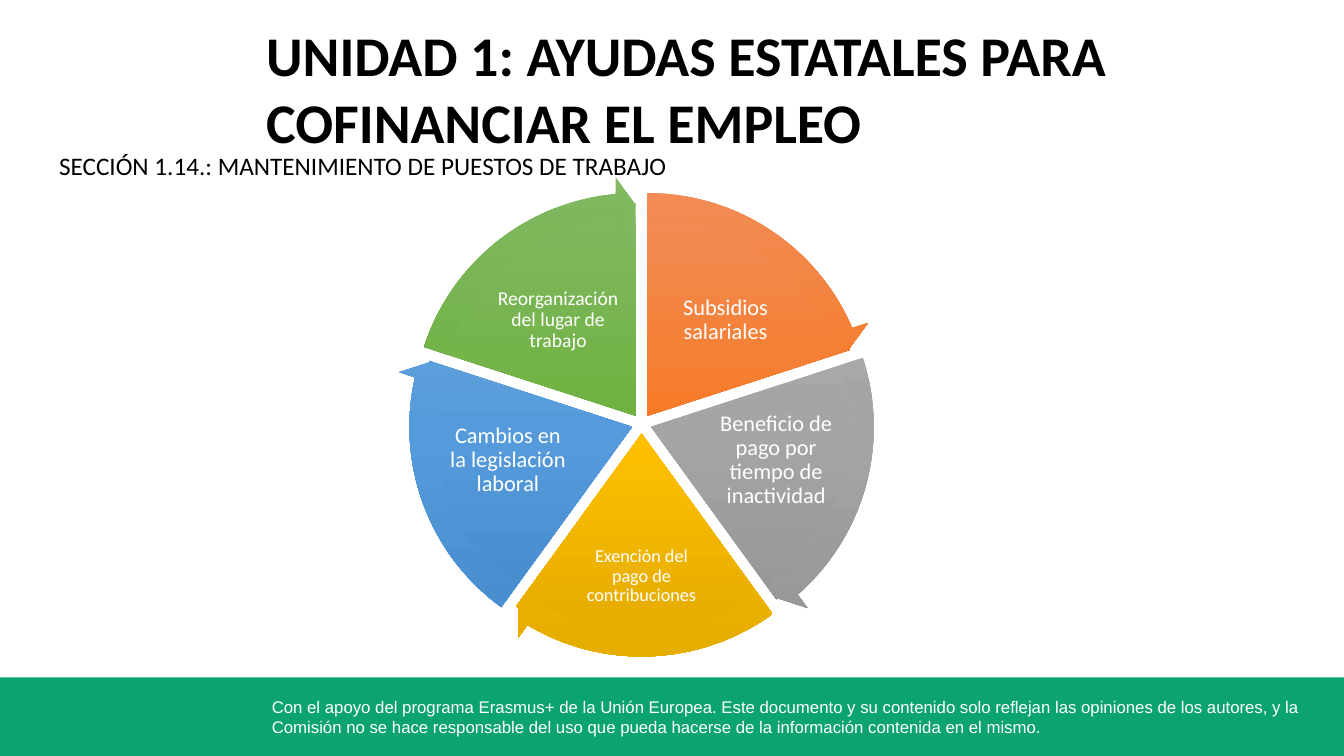
"""Build the slide on state aid for keeping jobs, with its five-part cycle."""
from copy import deepcopy
from math import cos, radians, sin

from pptx import Presentation
from pptx.dml.color import RGBColor as RGB
from pptx.enum.shapes import MSO_SHAPE as Kind
from pptx.enum.text import MSO_ANCHOR as Anchor, PP_ALIGN as Align
from pptx.oxml.ns import qn
from pptx.util import Cm, Pt

BLACK = RGB(0x00, 0x00, 0x00)
WHITE = RGB(0xFF, 0xFF, 0xFF)
TEAL = RGB(0x0C, 0xA3, 0x73)
ORANGE = RGB(0xF1, 0x8C, 0x57), RGB(0xF6, 0x7B, 0x28), RGB(0xE5, 0x6C, 0x19)
GRAY = RGB(0xAF, 0xAF, 0xAF), RGB(0xA5, 0xA5, 0xA5), RGB(0x93, 0x93, 0x93)
GOLD = RGB(0xFF, 0xC6, 0x4B), RGB(0xFF, 0xC0, 0x00), RGB(0xE3, 0xAB, 0x00)
BLUE = RGB(0x71, 0xA6, 0xDB), RGB(0x55, 0x9B, 0xDB), RGB(0x44, 0x8A, 0xCA)
GREEN = RGB(0x81, 0xB8, 0x61), RGB(0x6F, 0xB2, 0x42), RGB(0x62, 0xA3, 0x36)

WIDTH, HEIGHT = 33.87, 19.05
MID_X, MID_Y = 16.17, 10.68
SHIFT = 0.25
PIE, RING = 10.74, 12.07
STEP = 72
UNIT = 0.6

PARTS = [
    ("Subsidios salariales", 16, ORANGE, (16.56, 6.91, 3.45, 2.31)),
    ("Beneficio de pago por tiempo de inactividad", 16, GRAY,
     (17.96, 10.31, 3.2, 2.57)),
    ("Exención del pago de contribuciones", 13, GOLD,
     (14.63, 13.11, 3.07, 2.82)),
    ("Cambios en la legislación laboral", 16, BLUE, (11.2, 10.31, 3.2, 2.57)),
    ("Reorganización del lugar de trabajo", 14, GREEN,
     (12.34, 6.91, 3.45, 2.31)),
]


class Deck:
    """Hold the text style and the current slide."""

    def __init__(self, font):
        self.font = font
        self.file = Presentation()
        self.file.slide_width, self.file.slide_height = Cm(WIDTH), Cm(HEIGHT)
        self.slide = self.file.slides.add_slide(self.file.slide_layouts[6])

    def shape(self, kind, box):
        shape = self.slide.shapes.add_shape(kind, *map(Cm, box))
        shape.shadow.inherit = False
        shape.line.fill.background()
        return shape

    def band(self, box, color):
        fill = self.shape(Kind.RECTANGLE, box).fill
        fill.solid()
        fill.fore_color.rgb = color

    def sector(self, kind, index, size, tones, *angles):
        turn = radians(270 + STEP * (index + 0.5))
        left = MID_X + SHIFT * cos(turn) - size / 2
        top = MID_Y + SHIFT * sin(turn) - size / 2
        shape = self.shape(kind, (left, top, size, size))
        for spot, angle in enumerate(angles):
            shape.adjustments[spot] = angle
        shape.fill.gradient()
        shape.fill.gradient_angle = 270
        stops = shape._element.spPr.find(".//" + qn("a:gsLst"))
        stops.insert(1, deepcopy(stops[0]))
        for spot, (stop, tone) in enumerate(
                zip(shape.fill.gradient_stops, tones)):
            stop.position = spot / 2
            stop.color.rgb = tone

    def text(self, box, words, size, color, font=None, bold=False, inset=None,
             align=Align.LEFT, anchor=Anchor.TOP, pitch=1.0):
        frame = self.slide.shapes.add_textbox(*map(Cm, box)).text_frame
        frame.word_wrap = True
        frame.vertical_anchor = anchor
        if inset is not None:
            frame.margin_left = frame.margin_right = Cm(inset)
            frame.margin_top = frame.margin_bottom = Cm(inset)
        para = frame.paragraphs[0]
        para.text = words
        para.alignment = align
        para.line_spacing = pitch
        para.font.name = font or self.font
        para.font.size = Pt(size)
        para.font.bold = bold
        para.font.color.rgb = color


def main():
    deck = Deck("Calibri")
    deck.band((0, 17.07, WIDTH, 1.98), TEAL)
    deck.text((6.6, 17.42, 26.47, 1.27),
              "Con el apoyo del programa Erasmus+ de la Unión Europea. Este "
              "documento y su contenido solo reflejan las opiniones de los "
              "autores, y la Comisión no se hace responsable del uso que pueda "
              "hacerse de la información contenida en el mismo.",
              12, WHITE, font="Arial")

    starts = [(270 + STEP * i) % 360 * UNIT for i in range(len(PARTS))]
    ends = starts[1:] + starts[:1]
    for i, (words, size, tones, box) in enumerate(PARTS):
        deck.sector(Kind.PIE, i, PIE, tones, starts[i], ends[i])
        deck.text(box, words, size, WHITE, inset=0.05, align=Align.CENTER,
                  anchor=Anchor.MIDDLE, pitch=0.9)
    for i, (_, _, tones, _) in enumerate(PARTS):
        tip = (starts[i] + 39.92) % 216
        deck.sector(Kind.CIRCULAR_ARROW, i, RING, tones,
                    0.05, 3.28, tip, starts[i], 0.06)

    deck.text((6.71, 0.51, 22.81, 1.75),
              "UNIDAD 1: AYUDAS ESTATALES PARA COFINANCIAR EL EMPLEO",
              40, BLACK, bold=True, inset=0)
    deck.text((1.24, 3.66, 16.92, 1.02),
              "SECCIÓN 1.14.: MANTENIMIENTO DE PUESTOS DE TRABAJO", 18, BLACK)
    deck.file.save("out.pptx")


if __name__ == "__main__":
    main()
